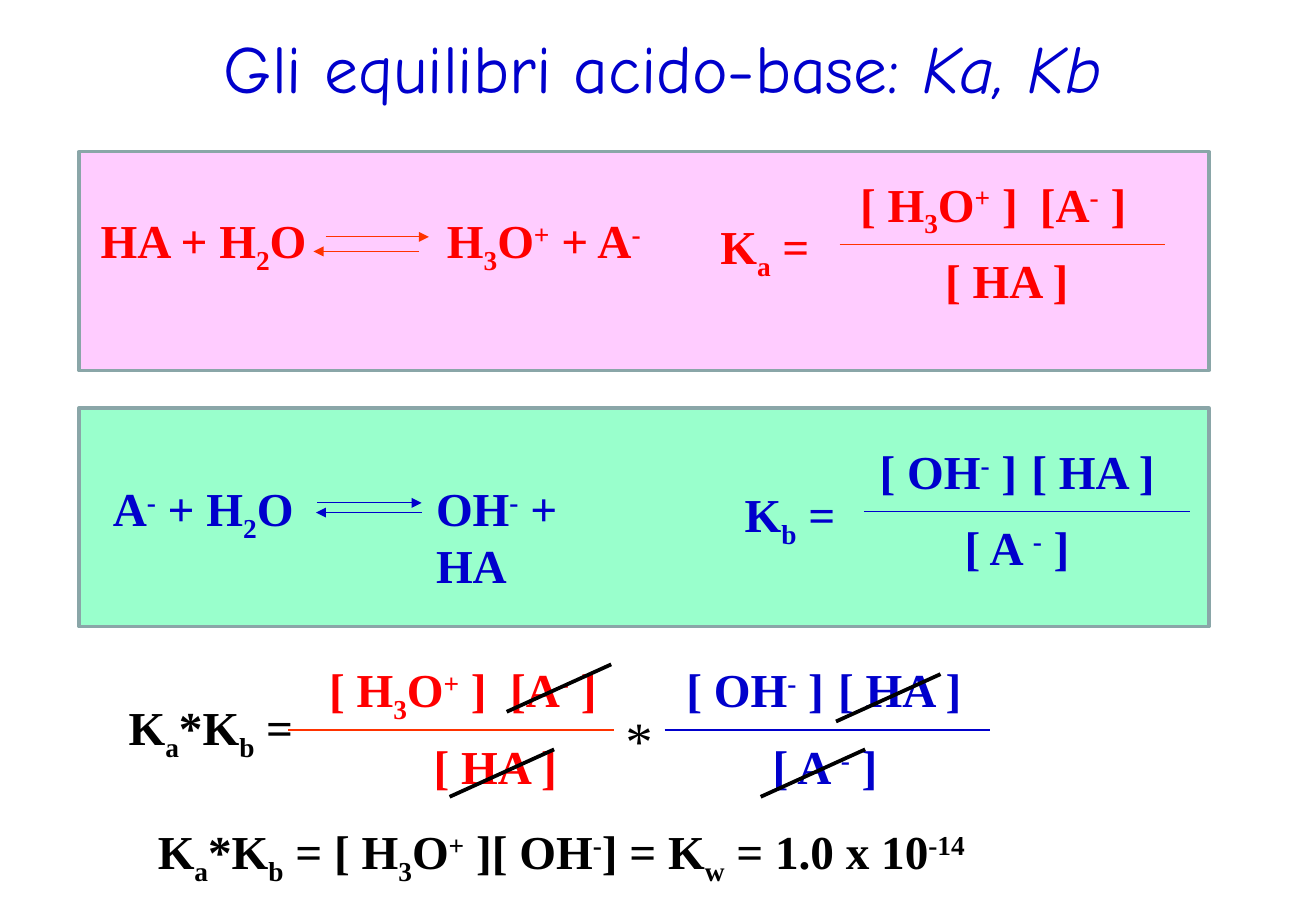
from lxml import etree
from pptx import Presentation
from pptx import util as u
from pptx.dml.color import RGBColor
from pptx.enum import shapes, text
from pptx.oxml.ns import qn

COLOURS = {
    "acid": "FF0000", "acid_line": "FF3300", "acid_panel": "FFCCFF",
    "base": "0000CC", "base_panel": "99FFCC",
    "border": "8AA6A8", "ink": "000000",
}
SERIF = "Times New Roman"
ROUND = "Comic Neue"
CELL = u.Inches(0.1)
TERM_HEIGHT = 5.7
BASELINES = {"_": "-25000", "^": "30000"}


class EquilibriumSlide:
    """Draws formulas on a grid of tenth-of-an-inch columns and rows."""

    def __init__(self, deck):
        self.slide = deck.slides.add_slide(deck.slide_layouts[5])

    def grid(self, *cells):
        return [round(cell * CELL) for cell in cells]

    def colour(self, name):
        return RGBColor.from_string(COLOURS[name])

    def font(self, paragraph, face, size, colour, bold=False):
        paragraph.font.name = face
        paragraph.font.size = u.Pt(size)
        paragraph.font.bold = bold
        paragraph.font.color.rgb = self.colour(colour)

    def title(self, plain, italic, col, row, cols, rows):
        heading = self.slide.shapes.title
        heading.left, heading.top, heading.width, heading.height = self.grid(col, row, cols, rows)
        heading.text_frame.auto_size = text.MSO_AUTO_SIZE.NONE
        heading.text_frame.vertical_anchor = text.MSO_ANCHOR.MIDDLE
        line = heading.text_frame.paragraphs[0]
        line.alignment = text.PP_ALIGN.CENTER
        self.font(line, ROUND, 40, "base")
        line.add_run().text = plain
        constants = line.add_run()
        constants.text = italic
        constants.font.italic = True

    def panel(self, row, fill):
        box = self.slide.shapes.add_shape(
            shapes.MSO_SHAPE.RECTANGLE, *self.grid(6.5, row, 93, 18))
        box.shadow.inherit = False
        box.fill.solid()
        box.fill.fore_color.rgb = self.colour(fill)
        box.line.color.rgb = self.colour("border")
        box.line.width = u.Pt(2)

    def formula(self, marked, col, row, cols, colour, rows=TERM_HEIGHT, size=28, bold=True):
        box = self.slide.shapes.add_textbox(*self.grid(col, row, cols, rows))
        box.text_frame.word_wrap = False
        box.text_frame.auto_size = text.MSO_AUTO_SIZE.SHAPE_TO_FIT_TEXT
        line = box.text_frame.paragraphs[0]
        self.font(line, SERIF, size, colour, bold)
        for part in marked.split("|"):
            shift = BASELINES.get(part[0])
            run = line.add_run()
            run.text = part[1:] if shift else part
            if shift:
                run.font._element.set("baseline", shift)

    def line(self, start, end, colour, width=0.75, arrow=False):
        stroke = self.slide.shapes.add_connector(
            shapes.MSO_CONNECTOR.STRAIGHT, *self.grid(*start, *end))
        stroke.line.color.rgb = self.colour(colour)
        stroke.line.width = u.Pt(width)
        if arrow:
            etree.SubElement(stroke.line._get_or_add_ln(), qn("a:tailEnd"), type="triangle")
        etree.SubElement(stroke._element.spPr, qn("a:effectLst"))

    def reversible(self, forward, backward, colour):
        for start, end, row in (forward, backward):
            self.line((start, row), (end, row), colour, arrow=True)

    def fraction(self, terms, cols, bar_col, bar_row, colour, line_colour):
        self.line((bar_col, bar_row), (bar_col + 26.8, bar_row), line_colour)
        for (marked, width), col, drop in zip(terms, cols, (-6.2, -6.2, 0.1)):
            self.formula(marked, col, bar_row + drop, width, colour)

    def cancel(self, col, row):
        self.line((col + 8.6, row), (col, row + 3.9), "ink", width=2.25)


def main():
    deck = Presentation()
    deck.slide_width, deck.slide_height = u.Inches(10.83), u.Inches(7.5)
    page = EquilibriumSlide(deck)
    page.title("Gli equilibri acido-base: ", "Ka, Kb", 8.3, -0.8, 92.5, 12.5)

    ka_terms = (("[ H|_3|O|^+| ]", 15.4), ("[A|^-| ]", 9.3), ("[ HA ]", 12.4))
    kb_terms = (("[ OH|^-| ]", 13.5), ("[ HA ]", 12.4), ("[ A |^-| ]", 11.2))

    page.panel(12.5, "acid_panel")
    page.formula("HA + H|_2|O", 7.3, 16.9, 18.9, "acid")
    page.formula("H|_3|O|^+| + A|^-", 35.8, 16.9, 18, "acid")
    page.reversible((26.8, 35.3, 19.5), (34.5, 25.8, 20.7), "acid_line")
    page.formula("K|_a| =", 58.3, 17.4, 10.6, "acid")
    page.fraction(ka_terms, (69.8, 84.6, 76.8), 69.1, 20.1, "acid", "acid_line")

    page.panel(33.6, "base_panel")
    page.formula("A|^-| + H|_2|O", 8.3, 39, 16.9, "base")
    page.formula("OH|^-| + HA", 34.9, 39, 18.7, "base")
    page.reversible((26.1, 34.7, 41.4), (34.7, 26, 42.2), "base")
    page.formula("K|_b| =", 60.3, 39.5, 10.7, "base")
    page.fraction(kb_terms, (71.4, 83.9, 78.4), 71.1, 42.1, "base", "base")

    page.formula("K|_a|*K|_b| =", 9.6, 57, 17.1, "ink")
    page.fraction(ka_terms, (26.1, 41, 34.7), 23.7, 60.1, "acid", "acid_line")
    page.formula("*", 50.5, 57.7, 4.3, "ink", rows=6.4, size=32, bold=False)
    page.fraction(kb_terms, (55.5, 68, 62.6), 54.7, 60.1, "base", "base")
    for col, row in ((41.7, 54.7), (37, 61.7), (62.6, 61.7), (68.8, 55.5)):
        page.cancel(col, row)

    page.formula("K|_a|*K|_b| = [ H|_3|O|^+| ][ OH|^-|] = K|_w| = 1.0 x 10|^-14",
                 12, 67.2, 73.1, "ink")
    deck.save("out.pptx")


if __name__ == "__main__":
    main()
